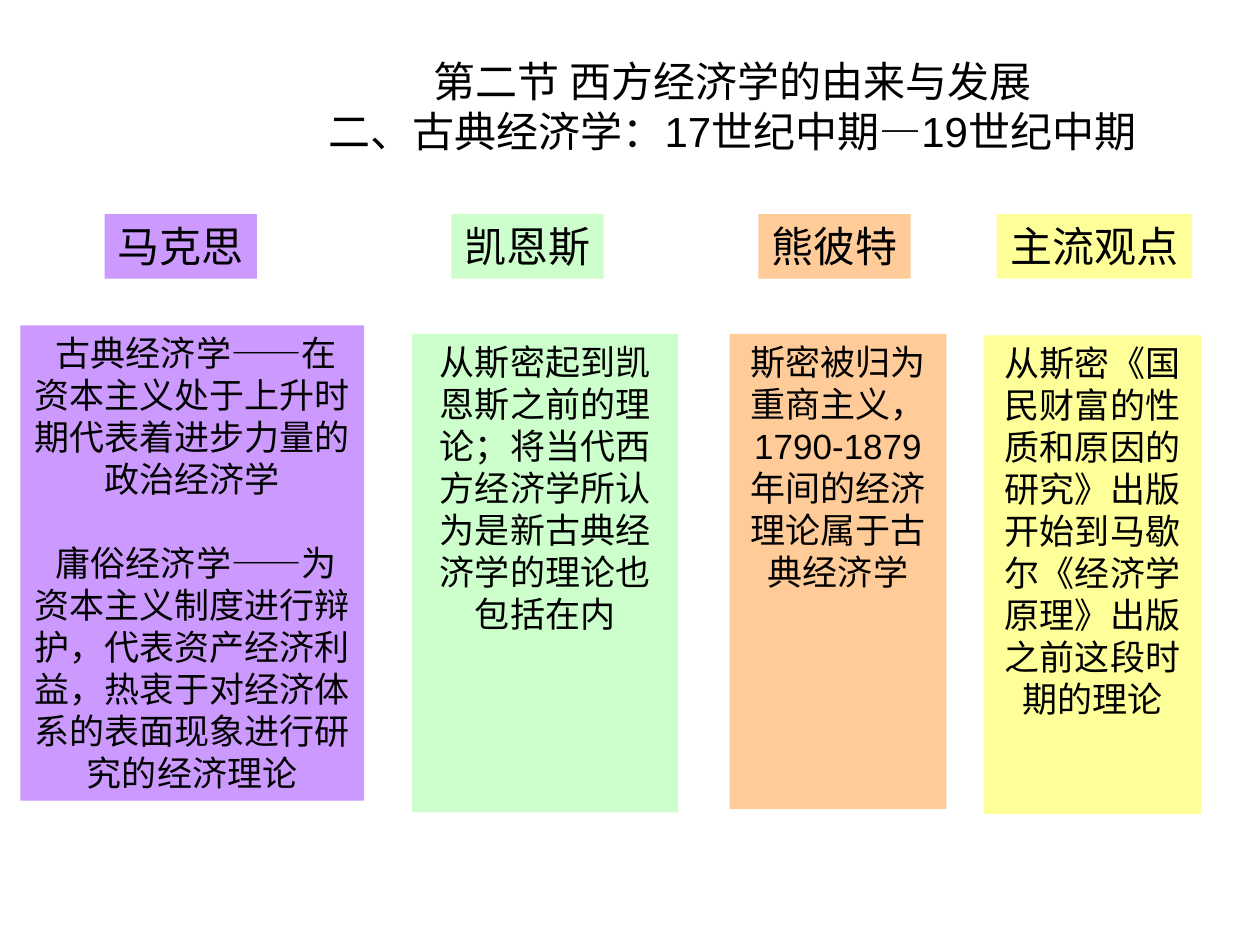
from collections import namedtuple
from dataclasses import dataclass

from pptx import Presentation
from pptx.dml.color import RGBColor
from pptx.enum import shapes, text
from pptx.oxml.ns import qn
from pptx.util import Cm, Pt

Box = namedtuple("Box", "left top width height")
School = namedtuple("School", "name views fill left width label_dx label_width body_dy body_height")


@dataclass(frozen=True)
class Theme:
    ink: str = "000000"
    purple: str = "CC99FF"
    green: str = "CCFFCC"
    orange: str = "FFCC99"
    yellow: str = "FFFF99"
    latin: str = "Arial"
    chinese: str = "Noto Sans CJK SC"
    heading: int = 24
    body: int = 20
    leading: float = 1.2


THEME = Theme()
LABEL_HEIGHT = 1.3
COLUMN_TOP = 4.32

SCHOOLS = [
    School("马克思",
           [" 古典经济学——在资本主义处于上升时期代表着进步力量的政治经济学",
            " 庸俗经济学——为资本主义制度进行辩护，代表资产经济利益，热衷于对经济体系的表面现象进行研究的经济理论"],
           THEME.purple, 0.41, 6.93, 1.7, 3.07, 2.24, 9.58),
    School("凯恩斯",
           ["从斯密起到凯恩斯之前的理论；将当代西方经济学所认为是新古典经济学的理论也包括在内"],
           THEME.green, 8.31, 5.36, 0.79, 3.07, 2.41, 9.65),
    School("熊彼特",
           ["斯密被归为重商主义，1790-1879年间的经济理论属于古典经济学"],
           THEME.orange, 14.71, 4.37, 0.58, 3.07, 2.41, 9.58),
    School("主流观点",
           ["从斯密《国民财富的性质和原因的研究》出版开始到马歇尔《经济学原理》出版之前这段时期的理论"],
           THEME.yellow, 19.84, 4.37, 0.25, 3.94, 2.44, 9.65),
]


def write(frame, paragraphs, size, gap=0, wrap=True, anchor=text.MSO_ANCHOR.TOP):
    frame.word_wrap = wrap
    frame.vertical_anchor = anchor
    for index, wording in enumerate(paragraphs):
        paragraph = frame.paragraphs[0] if index == 0 else frame.add_paragraph()
        paragraph.alignment = text.PP_ALIGN.CENTER
        paragraph.line_spacing = Pt(size * THEME.leading)
        paragraph.space_before = Pt(gap if index else 0)
        run = paragraph.add_run()
        run.text = wording
        run.font.size = Pt(size)
        run.font.name = THEME.latin
        run.font.color.rgb = RGBColor.from_string(THEME.ink)
        east_asian = run.font._element.makeelement(qn("a:ea"), {"typeface": THEME.chinese})
        run.font._element.find(qn("a:latin")).addnext(east_asian)


def add_panel(slide, box, fill):
    panel = slide.shapes.add_shape(shapes.MSO_SHAPE.RECTANGLE, *map(Cm, box))
    panel.shadow.inherit = False
    panel.fill.solid()
    panel.fill.fore_color.rgb = RGBColor.from_string(fill)
    panel.line.fill.background()
    return panel.text_frame


def add_title(slide, box):
    frame = slide.shapes.add_textbox(*map(Cm, box)).text_frame
    frame.margin_left = Cm(4.98)
    write(frame, ["第二节 西方经济学的由来与发展", "二、古典经济学：17世纪中期—19世纪中期"],
          THEME.heading, anchor=text.MSO_ANCHOR.MIDDLE)
    frame.paragraphs[0]._p.get_or_add_pPr().set("marR", str(Cm(0.6)))


def add_school(slide, box, school):
    body = Box(box.left, box.top + school.body_dy, box.width, school.body_height)
    write(add_panel(slide, body, school.fill), school.views, THEME.body,
          gap=THEME.body * THEME.leading)
    label = Box(box.left + school.label_dx, box.top, school.label_width, LABEL_HEIGHT)
    write(add_panel(slide, label, school.fill), [school.name], THEME.heading, wrap=False)


def main():
    deck = Presentation()
    deck.slide_width, deck.slide_height = Cm(25.4), Cm(19.05)
    slide = deck.slides.add_slide(deck.slide_layouts[6])
    for school in SCHOOLS:
        column = Box(school.left, COLUMN_TOP, school.width, school.body_dy + school.body_height)
        add_school(slide, column, school)
    add_title(slide, Box(1.27, 0.94, 22.86, 2.39))
    deck.save("out.pptx")


if __name__ == "__main__":
    main()
